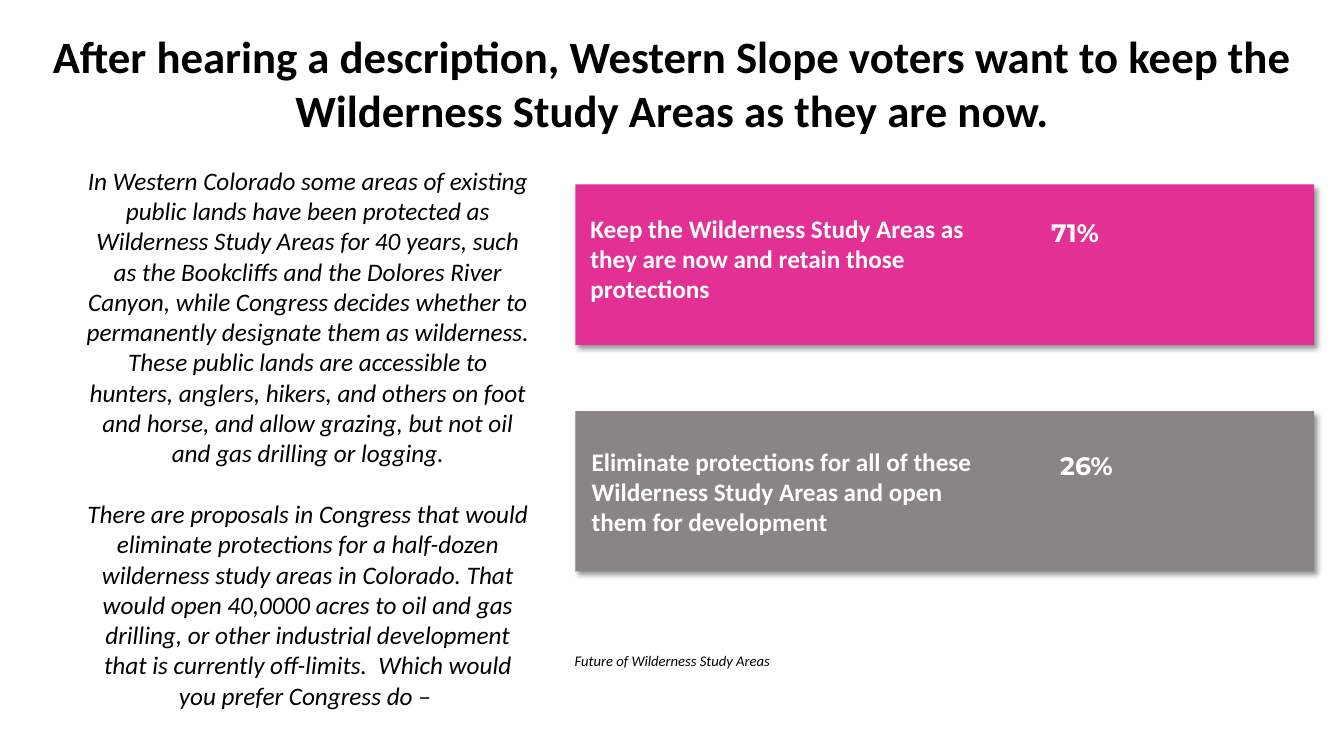
import pptx
import pptx.util
import pptx.dml.color
import pptx.enum.shapes
import pptx.enum.text
import pptx.oxml
import pptx.oxml.ns

Cm, Pt = pptx.util.Cm, pptx.util.Pt
RGB = pptx.dml.color.RGBColor
ALIGN = pptx.enum.text.PP_ALIGN
ANCHOR = pptx.enum.text.MSO_ANCHOR

COLORS = {"black": "000000", "white": "FFFFFF", "keep": "E33095", "eliminate": "8A8484"}

TITLE = ("After hearing a description, Western Slope voters want to keep the "
         "Wilderness Study Areas as they are now.")
QUESTION = [
    "In Western Colorado some areas of existing public lands have been protected as "
    "Wilderness Study Areas for 40 years, such as the Bookcliffs and the Dolores River "
    "Canyon, while Congress decides whether to permanently designate them as wilderness. "
    "These public lands are accessible to hunters, anglers, hikers, and others on foot "
    "and horse, and allow grazing, but not oil and gas drilling or logging.",
    "There are proposals in Congress that would eliminate protections for a half-dozen "
    "wilderness study areas in Colorado. That would open 40,0000 acres to oil and gas "
    "drilling, or other industrial development that is currently off-limits.  Which would "
    "you prefer Congress do – ",
]
CAPTION = "Future of Wilderness Study Areas"
ANSWERS = [
    {"color": "keep", "top": 4.65, "share": "71%", "share_left": 26.24, "inset": 0.58,
     "label": "Keep the Wilderness Study Areas as they are now and retain those protections",
     "label_left": 14.63, "label_width": 10.62},
    {"color": "eliminate", "top": 10.36, "share": "26%", "share_left": 26.47, "inset": 0.74,
     "label": "Eliminate protections for all of these Wilderness Study Areas and open "
              "them for development",
     "label_left": 14.66, "label_width": 10.82},
]

BAR_LEFT, BAR_WIDTH, BAR_HEIGHT = 14.5, 18.62, 4.04
PAGE_LEFT, PAGE_WIDTH = 0.74, 32.41
SHADOW = (
    f'<a:effectLst {pptx.oxml.ns.nsdecls("a")}>'
    f'<a:outerShdw blurRad="{Pt(4)}" dist="{Pt(3)}" dir="2700000" algn="tl" rotWithShape="0">'
    f'<a:srgbClr val="{COLORS["black"]}"><a:alpha val="40000"/></a:srgbClr>'
    '</a:outerShdw></a:effectLst>'
)

HEADING = {"size": Pt(32), "name": "Calibri", "bold": True}
BODY = {"size": Pt(18), "name": "Calibri", "italic": True}
LABEL = {"size": Pt(18), "name": "Calibri", "bold": True}
SHARE = {"size": Pt(18), "name": "Montserrat", "bold": True}
NOTE = {"size": Pt(10.5), "name": "Calibri", "italic": True}


def add_text(s, box, paragraphs, font, color="black", align=ALIGN.CENTER,
             anchor=ANCHOR.TOP, gap=0):
    tf = s.shapes.add_textbox(*map(Cm, box)).text_frame
    tf.word_wrap = True
    tf.vertical_anchor = anchor
    for i, text in enumerate(paragraphs):
        p = tf.add_paragraph() if i else tf.paragraphs[0]
        p.alignment = align
        p.space_before = Pt(gap if i else 0)
        r = p.add_run()
        r.text = text
        for key, value in font.items():
            setattr(r.font, key, value)
        r.font.color.rgb = RGB.from_string(COLORS[color])


def add_answer(s, answer):
    top = answer["top"]
    sp = s.shapes.add_shape(pptx.enum.shapes.MSO_SHAPE.RECTANGLE,
                            *map(Cm, (BAR_LEFT, top, BAR_WIDTH, BAR_HEIGHT)))
    sp.fill.solid()
    sp.fill.fore_color.rgb = RGB.from_string(COLORS[answer["color"]])
    sp.line.fill.background()
    sp._element.spPr.append(pptx.oxml.parse_xml(SHADOW))
    text_top = top + answer["inset"]
    add_text(s, (answer["label_left"], text_top, answer["label_width"], 2.57),
             [answer["label"]], LABEL, "white", ALIGN.LEFT, ANCHOR.MIDDLE)
    add_text(s, (answer["share_left"], text_top + 0.13, 5.66, 2.31),
             [answer["share"]], SHARE, "white", ALIGN.LEFT)


def main():
    """Build the Wilderness Study Areas poll slide."""
    prs = pptx.Presentation()
    prs.slide_width, prs.slide_height = Cm(33.87), Cm(19.05)
    s = prs.slides.add_slide(prs.slide_layouts[6])
    add_text(s, (PAGE_LEFT, 0.61, PAGE_WIDTH, 3), [TITLE], HEADING)
    for answer in ANSWERS:
        add_answer(s, answer)
    add_text(s, (1.88, 4.04, 11.76, 14.1), QUESTION, BODY, gap=22)
    add_text(s, (PAGE_LEFT, 16.31, PAGE_WIDTH, 0.71), [CAPTION], NOTE)
    prs.save("out.pptx")


if __name__ == "__main__":
    main()
